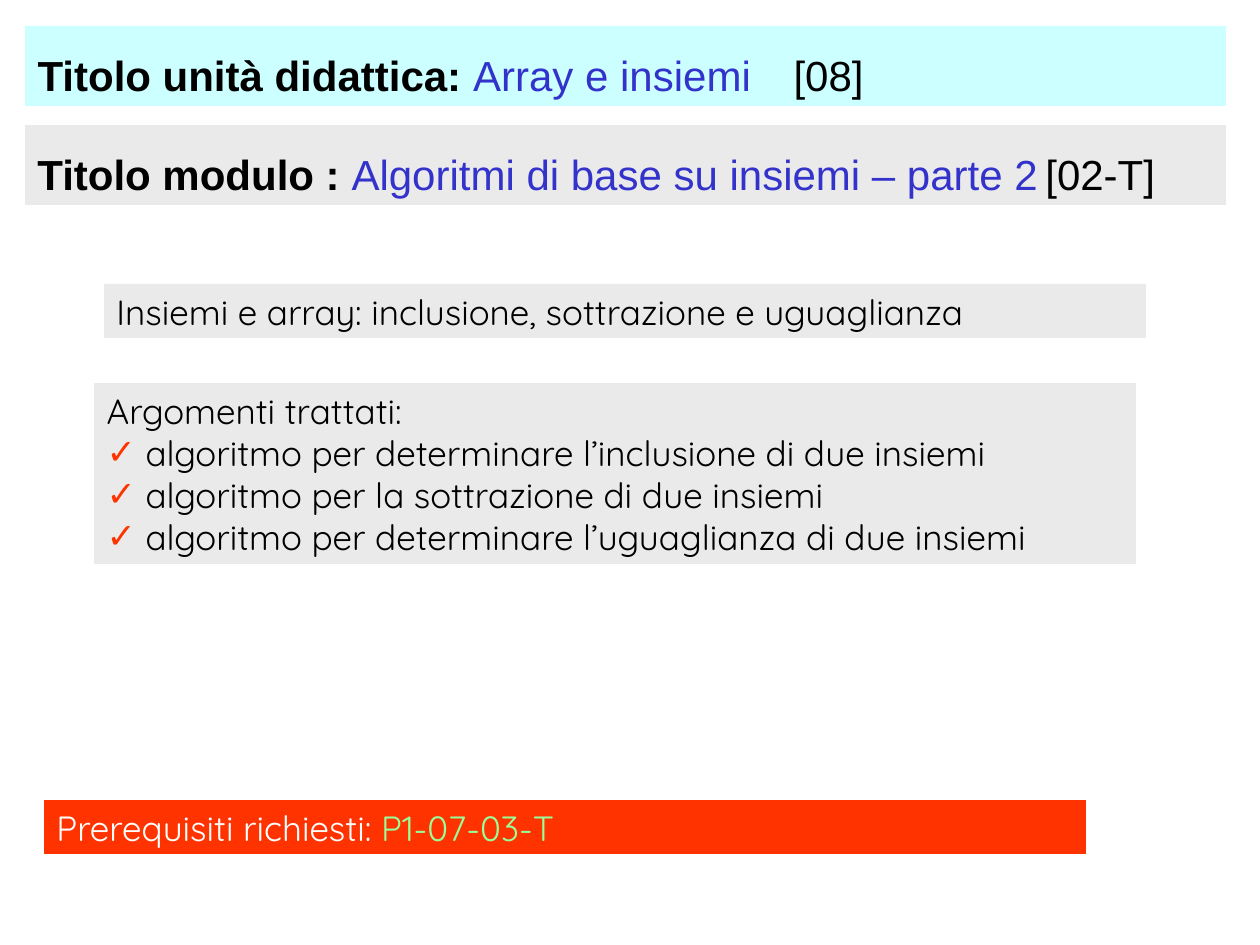
from dataclasses import dataclass

from lxml import etree
from pptx import Presentation
from pptx import util as u
from pptx.dml.color import RGBColor
from pptx.enum import shapes, text
from pptx.oxml import ns

BLACK = RGBColor(0x00, 0x00, 0x00)
WHITE = RGBColor(0xFF, 0xFF, 0xFF)
BLUE = RGBColor(0x33, 0x33, 0xCC)
CYAN = RGBColor(0xCC, 0xFF, 0xFF)
GREY = RGBColor(0xEA, 0xEA, 0xEA)
RED = RGBColor(0xFF, 0x33, 0x00)
GREEN = RGBColor(0x99, 0xFF, 0x99)

EMU_PER_PX = 914400 / 126
PANEL_WIDTH = 1042
CODE_TAB = 1172
BULLET_INDENT = 39


def px(length: int) -> u.Emu:
    return u.Emu(round(length * EMU_PER_PX))


@dataclass
class Box:
    left: int
    top: int
    width: int
    height: int
    fill: RGBColor


@dataclass
class Heading:
    box: Box
    label: str
    title: str
    code: str


def format_box(shape, box: Box, bottom_anchor: bool = False):
    """Place and fill a shape, and return its text frame."""
    shape.left, shape.top = px(box.left), px(box.top)
    shape.width, shape.height = px(box.width), px(box.height)
    shape.fill.solid()
    shape.fill.fore_color.rgb = box.fill
    shape.line.fill.background()
    frame = shape.text_frame
    frame.word_wrap = True
    frame.auto_size = text.MSO_AUTO_SIZE.NONE
    anchors = text.MSO_ANCHOR
    frame.vertical_anchor = anchors.BOTTOM if bottom_anchor else anchors.TOP
    frame.margin_left = frame.margin_right = u.Inches(0.1)
    frame.margin_top = frame.margin_bottom = u.Inches(0.05)
    return frame


def add_rectangle(slide, box: Box):
    shape = slide.shapes.add_shape(shapes.MSO_SHAPE.RECTANGLE, 0, 0, 0, 0)
    shape.shadow.inherit = False
    return shape


def add_text(paragraph, content: str, *, color=BLACK, font="Quicksand", size=20, bold=False) -> None:
    run = paragraph.add_run()
    run.text = content
    run.font.name = font
    run.font.size = u.Pt(size)
    run.font.bold = bold
    run.font.color.rgb = color


def reset_paragraph(paragraph, indent: int = 0):
    """Align left without spacing and return the paragraph properties."""
    paragraph.alignment = text.PP_ALIGN.LEFT
    paragraph.space_before = u.Pt(0)
    properties = paragraph._p.get_or_add_pPr()
    properties.set("marL", str(px(indent)))
    properties.set("indent", str(-px(indent)))
    return properties


def add_property(parent, tag: str, **attributes: str):
    return etree.SubElement(parent, ns.qn(tag), attributes)


def draw_heading(shape, heading: Heading) -> None:
    frame = format_box(shape, heading.box, bottom_anchor=True)
    paragraph = frame.paragraphs[0]
    tabs = add_property(reset_paragraph(paragraph), "a:tabLst")
    add_property(tabs, "a:tab", pos=str(px(CODE_TAB)), algn="r")
    add_text(paragraph, heading.label, font="Arial", size=24, bold=True)
    add_text(paragraph, heading.title + "\t", font="Arial", size=24, color=BLUE)
    add_text(paragraph, heading.code, font="Arial", size=24)


def draw_panel(shape, box: Box, runs: list[tuple[str, RGBColor]]) -> None:
    paragraph = format_box(shape, box).paragraphs[0]
    reset_paragraph(paragraph)
    for content, color in runs:
        add_text(paragraph, content, color=color)


def draw_topics(shape, box: Box, heading: str, topics: list[str]) -> None:
    frame = format_box(shape, box)
    paragraph = frame.paragraphs[0]
    add_property(reset_paragraph(paragraph), "a:buNone")
    add_text(paragraph, heading)
    for topic in topics:
        paragraph = frame.add_paragraph()
        properties = reset_paragraph(paragraph, BULLET_INDENT)
        bullet_color = add_property(properties, "a:buClr")
        add_property(bullet_color, "a:srgbClr", val=str(RED))
        add_property(properties, "a:buChar", char="✓")
        add_text(paragraph, topic)


def main() -> None:
    presentation = Presentation()
    presentation.slide_width, presentation.slide_height = u.Inches(10), u.Inches(7.5)
    slide = presentation.slides.add_slide(presentation.slide_layouts[1])

    # Unit and module headings
    unit = Heading(Box(25, 26, 1201, 80, CYAN), "Titolo unità didattica: ", "Array e insiemi", "[08]")
    module = Heading(Box(25, 125, 1201, 80, GREY), "Titolo modulo : ",
                     "Algoritmi di base su insiemi – parte 2", "[02-T]")
    draw_heading(slide.shapes.title, unit)
    draw_heading(add_rectangle(slide, module.box), module)

    # Subject
    subject = Box(104, 284, PANEL_WIDTH, 54, GREY)
    draw_panel(add_rectangle(slide, subject), subject,
               [("Insiemi e array: inclusione, sottrazione e uguaglianza", BLACK)])

    # Topics
    draw_topics(slide.placeholders[1], Box(94, 383, PANEL_WIDTH, 181, GREY), "Argomenti trattati:", [
        "algoritmo per determinare l’inclusione di due insiemi",
        "algoritmo per la sottrazione di due insiemi",
        "algoritmo per determinare l’uguaglianza di due insiemi",
    ])

    # Prerequisites
    prerequisites = Box(44, 800, PANEL_WIDTH, 54, RED)
    draw_panel(add_rectangle(slide, prerequisites), prerequisites,
               [("Prerequisiti richiesti: ", WHITE), ("P1-07-03-T", GREEN)])

    presentation.save("out.pptx")


if __name__ == "__main__":
    main()
